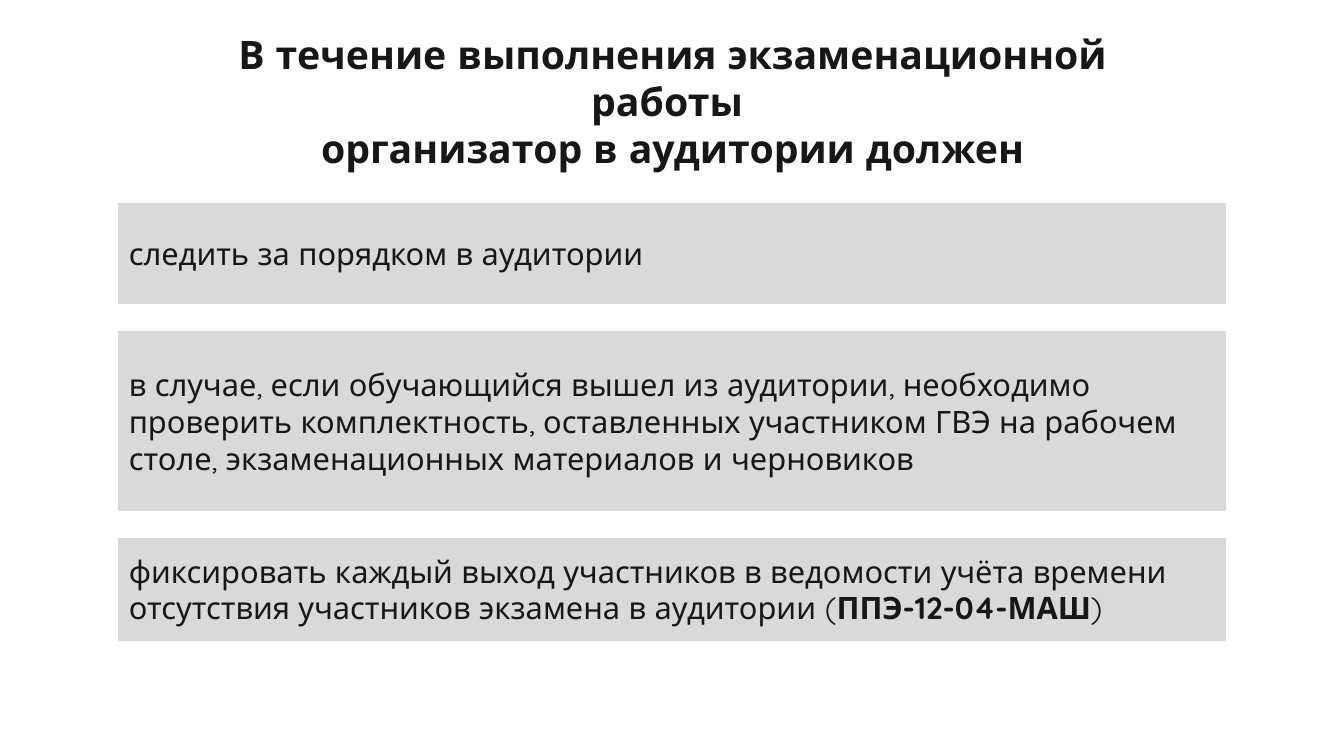
from dataclasses import dataclass

from pptx import Presentation
from pptx.dml.color import RGBColor
from pptx.enum.shapes import MSO_SHAPE as Preset
from pptx.enum.text import MSO_ANCHOR as Anchor, MSO_AUTO_SIZE as AutoSize, PP_ALIGN as Align
from pptx.util import Inches, Pt


@dataclass(frozen=True)
class Theme:
    font: str = "Quicksand"
    ink: RGBColor = RGBColor(0x18, 0x17, 0x17)
    panel: RGBColor = RGBColor(0xD9, 0xD9, 0xD9)
    heading_size: Pt = Pt(28)
    duty_size: Pt = Pt(22)
    border: Pt = Pt(1)


THEME = Theme()

HEADING = (
    "В течение выполнения экзаменационной работы ",
    "организатор в аудитории должен",
)

DUTIES = (
    (0.99, (("следить за порядком в аудитории", False),)),
    (1.77, ((
        "в случае, если обучающийся вышел из аудитории, необходимо "
        "проверить комплектность, оставленных участником ГВЭ на рабочем "
        "столе, экзаменационных материалов и черновиков", False),)),
    (1.01, (
        ("фиксировать каждый выход участников в ведомости учёта времени "
         "отсутствия участников экзамена в аудитории (", False),
        ("ППЭ-12-04-МАШ", True),
        (")", False),
    )),
)

DUTY_LEFT, DUTY_TOP, DUTY_WIDTH, DUTY_GAP = 1.18, 2.02, 10.97, 0.28


def style_run(run, size, bold):
    run.font.name = THEME.font
    run.font.size = size
    run.font.bold = bold
    run.font.color.rgb = THEME.ink


def add_heading(slide, lines):
    heading = slide.shapes.add_textbox(Inches(1.62), Inches(0.25), Inches(10.1), Inches(1.04))
    frame = heading.text_frame
    frame.word_wrap = True
    frame.auto_size = AutoSize.SHAPE_TO_FIT_TEXT
    frame.text = "\n".join(lines)
    for paragraph in frame.paragraphs:
        paragraph.alignment = Align.CENTER
        for run in paragraph.runs:
            style_run(run, THEME.heading_size, True)


def add_duty(slide, top, height, pieces):
    duty = slide.shapes.add_shape(
        Preset.RECTANGLE, Inches(DUTY_LEFT), Inches(top), Inches(DUTY_WIDTH), Inches(height))
    duty.shadow.inherit = False
    duty.fill.solid()
    duty.fill.fore_color.rgb = THEME.panel
    duty.line.color.rgb = THEME.panel
    duty.line.width = THEME.border
    frame = duty.text_frame
    frame.word_wrap = True
    frame.vertical_anchor = Anchor.MIDDLE
    paragraph = frame.paragraphs[0]
    paragraph.alignment = Align.LEFT
    for wording, bold in pieces:
        run = paragraph.add_run()
        run.text = wording
        style_run(run, THEME.duty_size, bold)


def main():
    deck = Presentation()
    deck.slide_width, deck.slide_height = Inches(13.33), Inches(7.5)
    slide = deck.slides.add_slide(deck.slide_layouts[6])
    add_heading(slide, HEADING)
    top = DUTY_TOP
    for height, pieces in DUTIES:
        add_duty(slide, top, height, pieces)
        top += height + DUTY_GAP
    deck.save("out.pptx")


if __name__ == "__main__":
    main()
